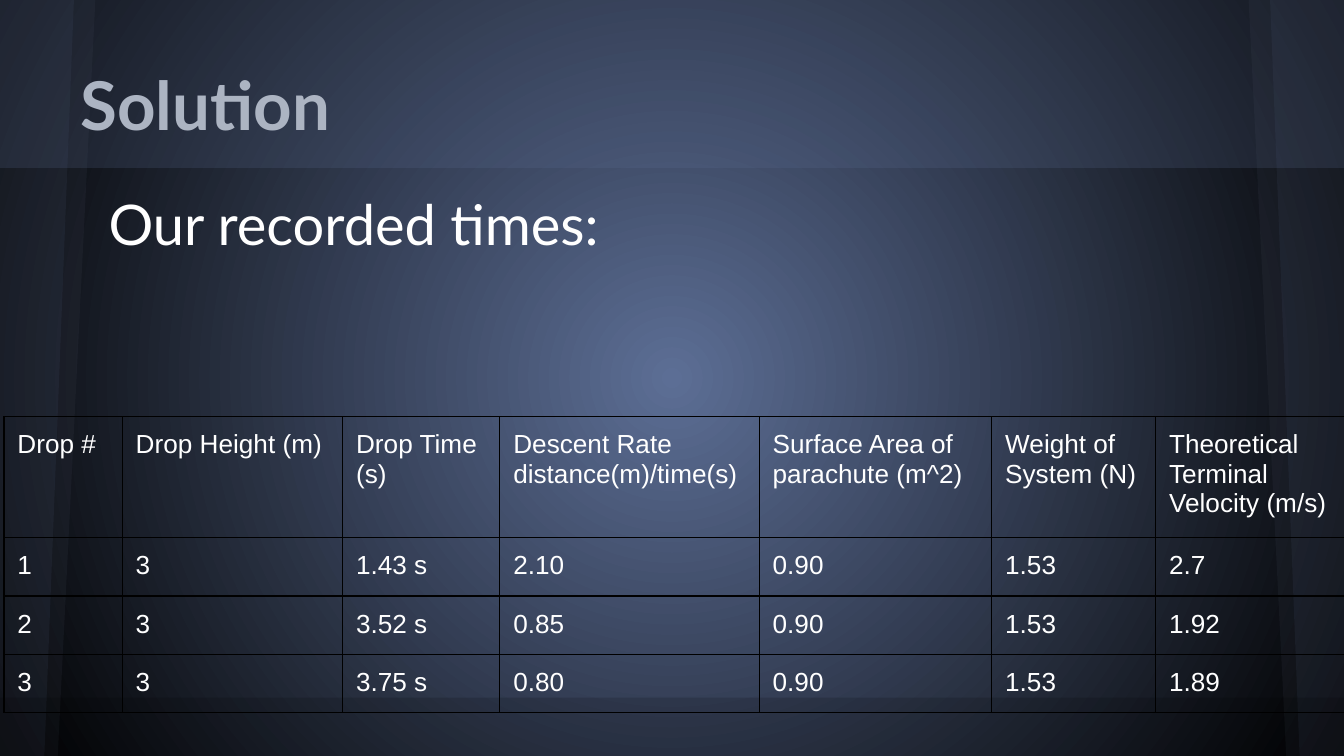
from lxml.etree import SubElement
from pptx import Presentation
from pptx.dml.color import RGBColor
from pptx.enum.shapes import MSO_SHAPE as Shape
from pptx.enum.text import MSO_ANCHOR as Anchor, PP_ALIGN as Align
from pptx.oxml import parse_xml
from pptx.oxml.ns import nsdecls, qn
from pptx.util import Inches, Pt

WIDTH = 10
HEIGHT = WIDTH * 9 / 16
BLUE, SLATE, BLACK, WHITE, SILVER = "5C6E95", "5A6378", "000000", "FFFFFF", "ACB4C2"
COLUMNS = [0.88, 1.64, 1.17, 1.93, 1.73, 1.22, 1.41]
ROW_HEIGHT = 0.42
DROPS = [
    ["Drop #", "Drop Height (m)", "Drop Time\n(s)", "Descent Rate distance(m)/time(s)",
     "Surface Area of parachute (m^2)", "Weight of\nSystem (N)",
     "Theoretical\nTerminal\nVelocity (m/s)"],
    ["1", "3", "1.43 s", "2.10", "0.90", "1.53", "2.7"],
    ["2", "3", "3.52 s", "0.85", "0.90", "1.53", "1.92"],
    ["3", "3", "3.75 s", "0.80", "0.90", "1.53", "1.89"],
]


def color(value):
    return RGBColor.from_string(value)


class SlideBuilder:
    """Hold the slide style and draw each kind of element on the current page."""

    heading_font = "Lato"
    table_font = "Arial"
    inset = Inches(0.1)

    def __init__(self, page):
        self.page = page

    def background(self, center, edge):
        fill = self.page.background.fill
        fill.gradient()
        for stop, value in zip(fill.gradient_stops, (center, edge)):
            stop.color.rgb = color(value)
        gradient = self.page.element.find(".//" + qn("a:gradFill"))
        gradient.replace(gradient.find(qn("a:lin")), parse_xml(
            f'<a:path {nsdecls("a")} path="circle">'
            '<a:fillToRect l="50000" t="50000" r="50000" b="50000"/></a:path>'))

    def paint(self, shape, value, opacity):
        shape.shadow.inherit = False
        shape.line.fill.background()
        shape.fill.solid()
        shape.fill.fore_color.rgb = color(value)
        tint = shape.element.spPr.find(".//" + qn("a:srgbClr"))
        SubElement(tint, qn("a:alpha"), val=str(opacity * 1000))

    def band(self, top, height, value, opacity):
        shape = self.page.shapes.add_shape(
            Shape.RECTANGLE, 0, Inches(top), Inches(WIDTH), Inches(height))
        self.paint(shape, value, opacity)

    def side_panel(self, edge, top_inner, bottom_inner, value):
        corners = [(top_inner, 0), (bottom_inner, HEIGHT), (edge, HEIGHT)]
        outline = self.page.shapes.build_freeform(Inches(edge), 0)
        outline.add_line_segments([(Inches(x), Inches(y)) for x, y in corners])
        self.paint(outline.convert_to_shape(), value, 10)

    def set_insets(self, holder):
        holder.margin_left = holder.margin_right = self.inset
        holder.margin_top = holder.margin_bottom = self.inset

    def style_text(self, frame, font, size, value, bold=False):
        for para in frame.paragraphs:
            para.alignment = Align.LEFT
            para.space_before = para.space_after = Pt(0)
            para.font.name = font
            para.font.size = Pt(size)
            para.font.bold = bold
            para.font.color.rgb = color(value)

    def text(self, box, words, size, value, bold=False):
        frame = box.text_frame
        frame.text = words
        frame.word_wrap = True
        self.set_insets(frame)
        self.style_text(frame, self.heading_font, size, value, bold)

    def title(self, words):
        box = self.page.shapes.title
        box.left, box.top, box.width, box.height = map(Inches, (0.5, 0.23, 9, 0.94))
        box.element.getparent().append(box.element)
        self.text(box, words, 36, SILVER, bold=True)
        box.text_frame.vertical_anchor = Anchor.BOTTOM

    def body(self, words):
        box = self.page.shapes.add_textbox(*map(Inches, (0.5, 1.31, 9, 4.07)))
        self.text(box, words, 30, WHITE)
        properties = box.text_frame.paragraphs[0]._p.get_or_add_pPr()
        properties.set("marL", str(Inches(0.38)))
        properties.set("indent", str(Inches(-0.17)))

    def border(self, cell):
        properties = cell._tc.get_or_add_tcPr()
        for index, side in enumerate(("lnL", "lnR", "lnT", "lnB")):
            properties.insert(index, parse_xml(
                f'<a:{side} {nsdecls("a")} w="{Pt(0.75)}"><a:solidFill>'
                f'<a:srgbClr val="{BLACK}"/></a:solidFill></a:{side}>'))

    def table(self, left, top, side, widths, rows):
        holder = self.page.shapes.add_table(
            len(rows), len(widths), Inches(left), Inches(top), Inches(side), Inches(side))
        table = holder.table
        table.first_row = table.horz_banding = False
        for column, width in zip(table.columns, widths):
            column.width = Inches(width)
        for row, texts in zip(table.rows, rows):
            row.height = Inches(ROW_HEIGHT)
            for cell, words in zip(row.cells, texts):
                cell.text = words
                cell.fill.background()
                self.set_insets(cell)
                self.style_text(cell.text_frame, self.table_font, 14, WHITE)
                self.border(cell)
        holder.width = holder.height = Inches(side)


def main():
    deck = Presentation()
    deck.slide_width, deck.slide_height = Inches(WIDTH), Inches(HEIGHT)
    builder = SlideBuilder(deck.slides.add_slide(deck.slide_layouts[5]))
    builder.background(BLUE, BLACK)
    builder.band(0, 1.25, BLUE, 20)
    for edge, direction in ((0, 1), (WIDTH, -1)):
        for top, bottom, value in ((0.71, 0.43, SLATE), (0.55, 0.33, BLUE)):
            builder.side_panel(edge, edge + direction * top, edge + direction * bottom, value)
    builder.band(5.19, HEIGHT - 5.19, BLACK, 15)
    builder.title("Solution")
    builder.body("Our recorded times:")
    builder.table(0.03, 3.1, 3.28, COLUMNS, DROPS)
    deck.save("out.pptx")


if __name__ == "__main__":
    main()
